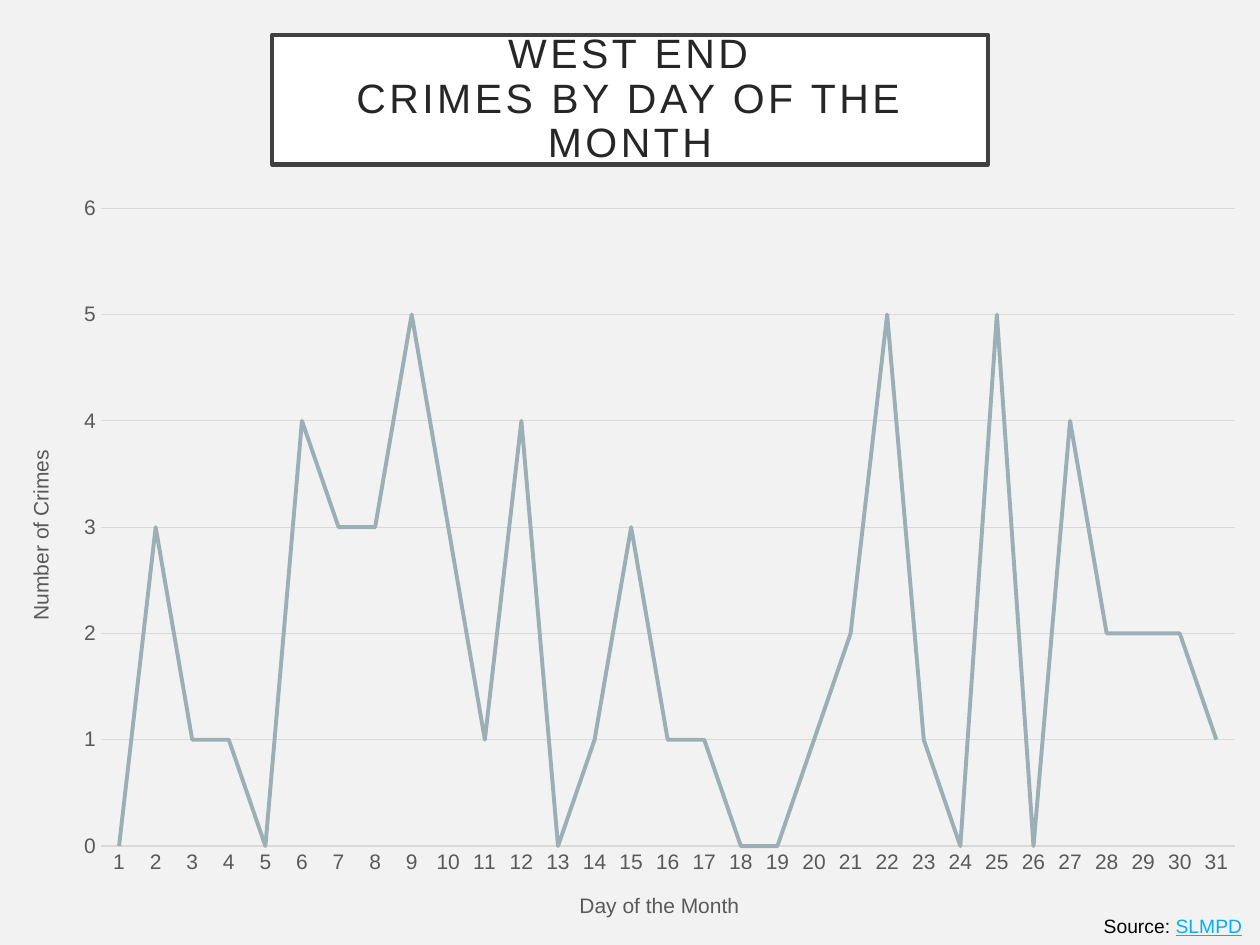
from lxml import etree
from pptx import Presentation
from pptx.chart.data import CategoryChartData
from pptx.dml.color import RGBColor
from pptx.enum.chart import XL_CHART_TYPE, XL_MARKER_STYLE, XL_TICK_MARK
from pptx.enum.text import MSO_ANCHOR, MSO_AUTO_SIZE, PP_ALIGN
from pptx.oxml import parse_xml
from pptx.oxml.ns import nsdecls, qn
from pptx.util import Pt

LINE_CHART = XL_CHART_TYPE.LINE
NO_MARKER = XL_MARKER_STYLE.NONE
NO_TICK = XL_TICK_MARK.NONE
CENTER = PP_ALIGN.CENTER
MIDDLE = MSO_ANCHOR.MIDDLE
NO_AUTOFIT = MSO_AUTO_SIZE.NONE

FONT = "Arial"
COLORS = {
    "background": "F2F2F2",
    "title_fill": "FFFFFF",
    "title_border": "404040",
    "title_text": "262626",
    "axis_text": "595959",
    "grid": "D9D9D9",
    "crimes": "9BAFB5",
    "source": "000000",
    "source_link": "00B0F0",
}
CRIMES_BY_DAY = [0, 3, 1, 1, 0, 4, 3, 3, 5, 3, 1, 4, 0, 1, 3, 1,
                 1, 0, 0, 1, 2, 5, 1, 0, 5, 0, 4, 2, 2, 2, 1]
# Inner plot area as fractions of the chart box
PLOT_AREA = {"x": 0.08, "y": 0.03, "w": 0.9, "h": 0.84}


def color(name):
    return RGBColor.from_string(COLORS[name])


def style_font(font, size, color_name):
    font.name = FONT
    font.size = Pt(size)
    font.bold = False
    font.color.rgb = color(color_name)


def style_line(line, color_name, width):
    line.color.rgb = color(color_name)
    line.width = Pt(width)


def add_run(paragraph, text, size, color_name):
    run = paragraph.add_run()
    run.text = text
    style_font(run.font, size, color_name)
    return run


def place_title(slide, left, top, width, height):
    heading = slide.shapes.title
    heading.left, heading.top = Pt(left), Pt(top)
    heading.width, heading.height = Pt(width), Pt(height)
    heading.fill.solid()
    heading.fill.fore_color.rgb = color("title_fill")
    style_line(heading.line, "title_border", 2.5)

    frame = heading.text_frame
    frame.word_wrap = True
    frame.auto_size = NO_AUTOFIT
    frame.vertical_anchor = MIDDLE
    frame.margin_left = frame.margin_right = Pt(14.4)
    frame.margin_top = frame.margin_bottom = Pt(14.4)

    paragraph = frame.paragraphs[0]
    paragraph.alignment = CENTER
    paragraph.line_spacing = 0.9
    for number, text in enumerate(["WEST END", "CRIMES BY DAY OF THE MONTH"]):
        if number:
            paragraph.add_line_break()
        run = add_run(paragraph, text, 23.4, "title_text")
        run.font._element.set("spc", "200")
    # Give the line break the same height as the text
    for line_break in paragraph._p.findall(qn("a:br")):
        etree.SubElement(line_break, qn("a:rPr")).set("sz", "2340")


def style_axis(axis, title):
    axis.major_tick_mark = axis.minor_tick_mark = NO_TICK
    style_font(axis.tick_labels.font, 12, "axis_text")
    add_run(axis.axis_title.text_frame.paragraphs[0], title, 12, "axis_text")


def fix_plot_area(chart):
    settings = "".join(f'<c:{side}Mode val="edge"/>' for side in "xy")
    settings += "".join(f'<c:{key} val="{share}"/>'
                        for key, share in PLOT_AREA.items())
    plot_area = chart._chartSpace.chart.plotArea
    for layout in plot_area.findall(qn("c:layout")):
        plot_area.remove(layout)
    plot_area.insert(0, parse_xml(
        f'<c:layout {nsdecls("c")}><c:manualLayout>'
        f'<c:layoutTarget val="inner"/>{settings}'
        f'</c:manualLayout></c:layout>'))


def place_crime_chart(slide, left, top, width, height):
    data = CategoryChartData()
    data.categories = [str(day + 1) for day in range(len(CRIMES_BY_DAY))]
    data.add_series("Series 1", CRIMES_BY_DAY)
    chart = slide.shapes.add_chart(
        LINE_CHART, Pt(left), Pt(top), Pt(width), Pt(height), data).chart
    chart.has_legend = False
    chart.has_title = False
    chart.font.name = FONT
    chart.font.size = Pt(12)
    chart.plots[0].vary_by_categories = False

    crimes = chart.plots[0].series[0]
    crimes.smooth = False
    crimes.marker.style = NO_MARKER
    style_line(crimes.format.line, "crimes", 2.25)

    days, counts = chart.category_axis, chart.value_axis
    style_axis(days, "Day of the Month")
    style_line(days.format.line, "grid", 0.75)
    style_axis(counts, "Number of Crimes")
    counts.format.line.fill.background()
    counts.minimum_scale, counts.maximum_scale = 0, 6
    counts.major_unit = 1
    style_line(counts.major_gridlines.format.line, "grid", 0.75)
    fix_plot_area(chart)


def place_source(slide, left, top, width, height):
    source = slide.shapes.add_textbox(Pt(left), Pt(top), Pt(width), Pt(height))
    frame = source.text_frame
    frame.word_wrap = False
    paragraph = frame.paragraphs[0]
    paragraph.alignment = CENTER
    add_run(paragraph, "Source: ", 11, "source")
    add_run(paragraph, "SLMPD", 11, "source_link").font.underline = True


def main():
    deck = Presentation()
    deck.slide_width, deck.slide_height = Pt(720), Pt(540)
    slide = deck.slides.add_slide(deck.slide_layouts[5])
    slide.background.fill.solid()
    slide.background.fill.fore_color.rgb = color("background")

    place_source(slide, 623.5, 519, 93.6, 21)
    place_title(slide, 155.5, 20, 409, 74)
    place_crime_chart(slide, 0, 106, 720, 434)
    deck.save("out.pptx")


if __name__ == "__main__":
    main()
